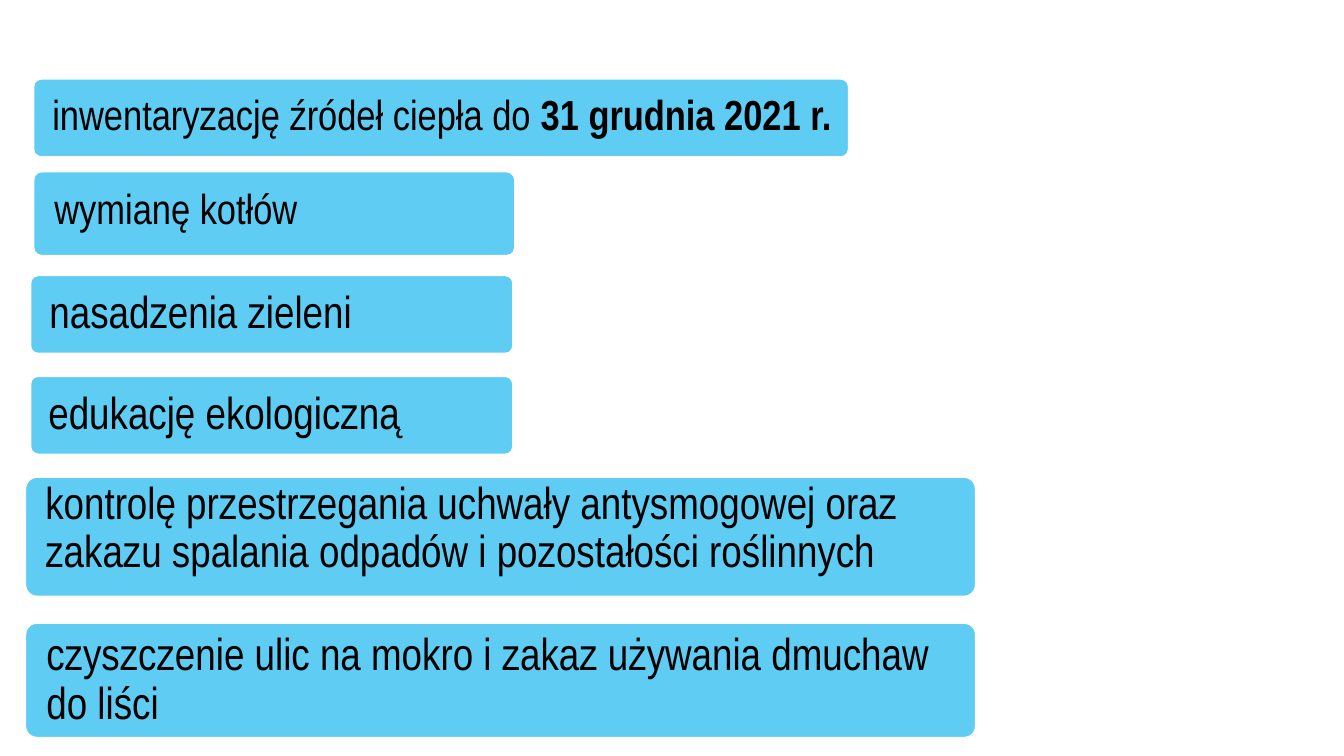
from pptx import Presentation
from pptx.dml.color import RGBColor
from pptx.enum.shapes import MSO_SHAPE
from pptx.enum.text import MSO_ANCHOR, PP_ALIGN
from pptx.util import Inches, Pt

SKY = RGBColor(0x5E, 0xCC, 0xF3)
WHITE = RGBColor(0xFF, 0xFF, 0xFF)
BLACK = RGBColor(0, 0, 0)
FONT = "Arial Narrow"

# Panel box, label box (left, top, width, height), size, (text, bold) runs
ACTIONS = [
    ((0.33, 0.78, 8.09, 0.78), (0.47, 0.79, 8, 0.74), 30,
     [("inwentaryzację źródeł ciepła do ", False), ("31 grudnia 2021 r.", True)]),
    ((0.33, 1.7, 4.78, 0.84), (0.49, 1.67, 4.64, 0.84), 30,
     [("wymianę kotłów", False)]),
    ((0.3, 2.73, 4.79, 0.78), (0.44, 2.75, 4.95, 0.74), 32,
     [("nasadzenia zieleni", False)]),
    ((0.3, 3.73, 4.79, 0.78), (0.43, 3.75, 4.63, 0.74), 32,
     [("edukację ekologiczną", False)]),
    ((0.25, 4.73, 9.43, 1.19), (0.4, 4.75, 9.23, 1), 32,
     [("kontrolę przestrzegania uchwały antysmogowej oraz "
       "zakazu spalania odpadów i pozostałości roślinnych", False)]),
    ((0.25, 6.18, 9.43, 1.14), (0.41, 6.18, 9.28, 1.14), 32,
     [("czyszczenie ulic na mokro i zakaz używania dmuchaw do liści", False)]),
]


def add_panel(slide, box):
    panel = slide.shapes.add_shape(
        MSO_SHAPE.ROUNDED_RECTANGLE, *(Inches(length) for length in box))
    panel.adjustments[0] = 0.1
    panel.shadow.inherit = False
    panel.fill.solid()
    panel.fill.fore_color.rgb = SKY
    panel.line.color.rgb = WHITE
    panel.line.width = Pt(1.5)


def add_label(slide, box, size, runs):
    label = slide.shapes.add_textbox(*(Inches(length) for length in box))
    frame = label.text_frame
    frame.word_wrap = True
    frame.vertical_anchor = MSO_ANCHOR.MIDDLE
    frame.margin_left = frame.margin_right = Inches(0.05)
    frame.margin_top = frame.margin_bottom = Inches(0.04)
    paragraph = frame.paragraphs[0]
    paragraph.alignment = PP_ALIGN.LEFT
    paragraph.line_spacing = 0.9
    paragraph.font.name = FONT
    paragraph.font.size = Pt(size)
    paragraph.font.color.rgb = BLACK
    for text, bold in runs:
        run = paragraph.add_run()
        run.text = text
        run.font.bold = bold


def main():
    prs = Presentation()
    prs.slide_width = Inches(13.33)
    prs.slide_height = Inches(7.5)
    slide = prs.slides.add_slide(prs.slide_layouts[6])
    for panel_box, label_box, size, runs in ACTIONS:
        add_panel(slide, panel_box)
        add_label(slide, label_box, size, runs)
    prs.save("out.pptx")


if __name__ == "__main__":
    main()
